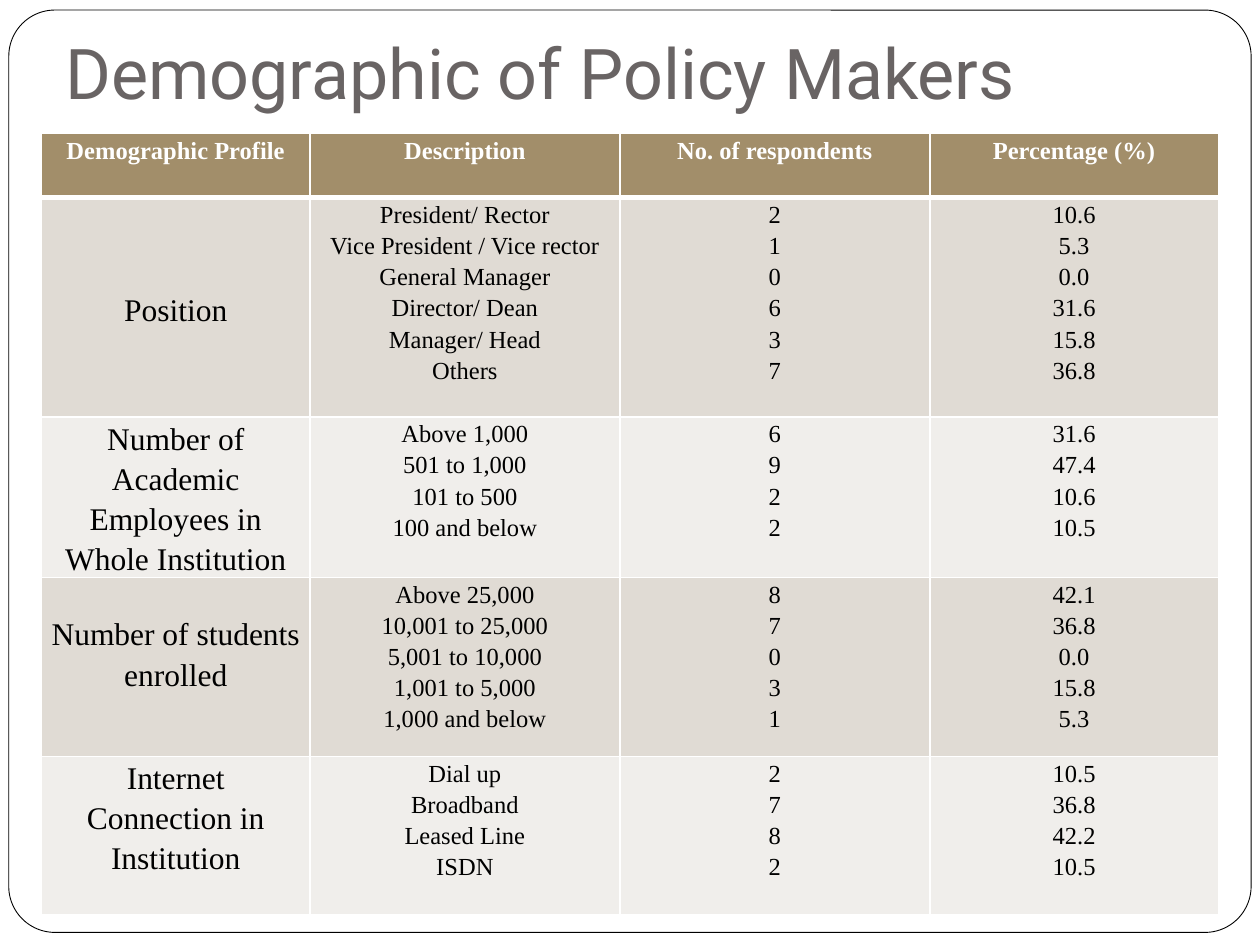
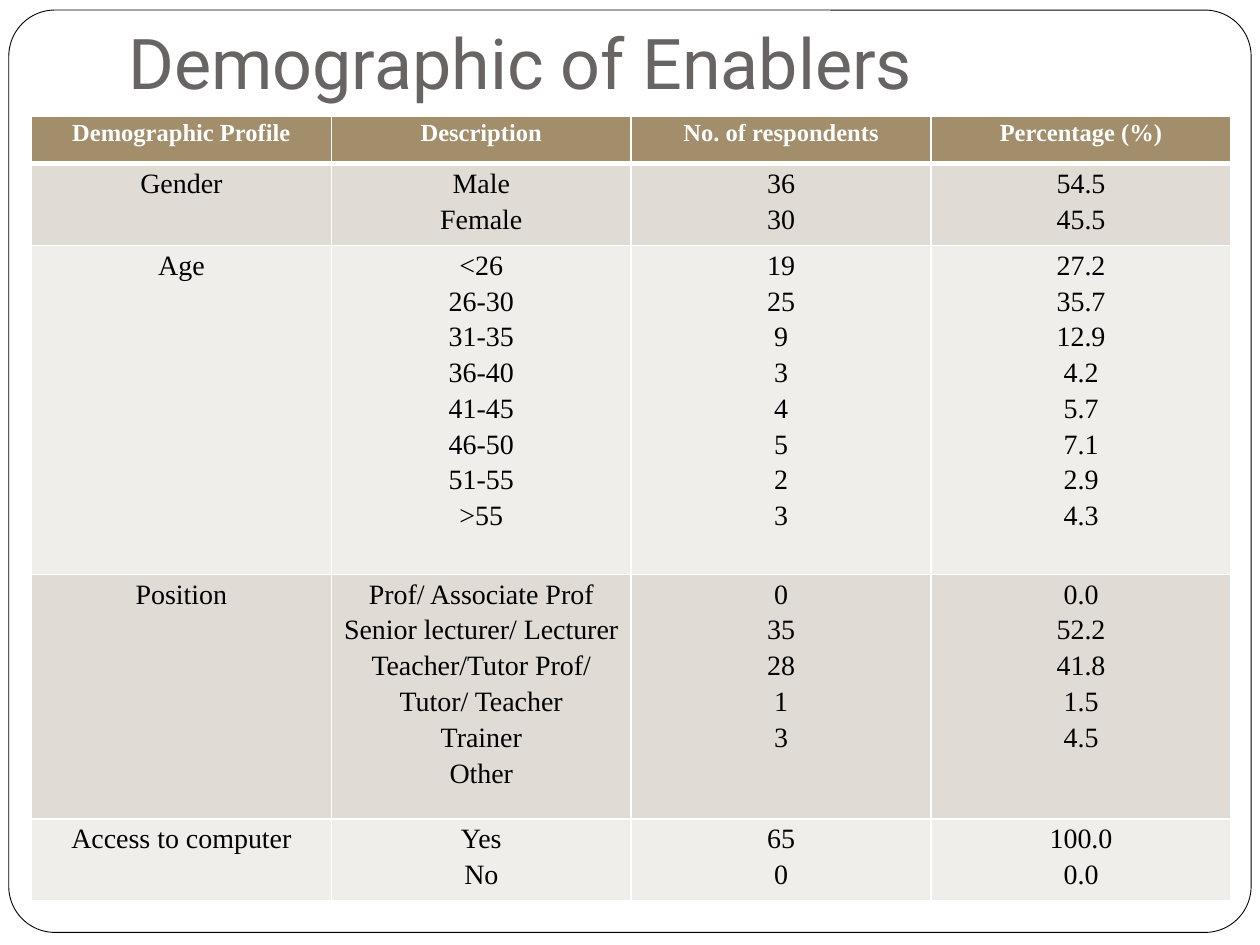
"""Build two slides with demographic tables of policy makers and enablers."""
from lxml.etree import SubElement
from pptx import Presentation
from pptx.dml.color import RGBColor
from pptx.enum.shapes import MSO_SHAPE
from pptx.enum.text import MSO_ANCHOR, MSO_AUTO_SIZE, PP_ALIGN
from pptx.oxml import parse_xml
from pptx.oxml.ns import nsdecls
from pptx.util import Inches, Pt

WHITE = RGBColor(0xFF, 0xFF, 0xFF)
BLACK = RGBColor(0, 0, 0)
TITLE_GREY = RGBColor(0x69, 0x64, 0x64)
HEADER_TAN = RGBColor(0xA2, 0x8E, 0x6A)
BANDS = [RGBColor(0xF0, 0xEE, 0xEB), RGBColor(0xE0, 0xDB, 0xD4)]
TITLE_FONT = "Roboto"
TABLE_FONT = "Times New Roman"
HEADER_SIZE = 14
HEADINGS = ["Demographic Profile", "Description", "No. of respondents", "Percentage (%)"]

SLIDES = [
    {
        "title": "Demographic of Policy Makers",
        "title_at": (0.42, -0.25),
        "table_at": (0.33, 1.06),
        "columns": [2.13, 2.46, 2.46, 2.29],
        "row_heights": [0.51, 1.74, 1.18, 1.42, 1.26],
        "label_size": 18,
        "value_size": 14,
        "label_drops": {1: 0.72, 3: 0.28},
        "groups": [
            ("Position", [
                ("President/ Rector", "2", "10.6"),
                ("Vice President / Vice rector", "1", "5.3"),
                ("General Manager", "0", "0.0"),
                ("Director/ Dean", "6", "31.6"),
                ("Manager/ Head", "3", "15.8"),
                ("Others", "7", "36.8"),
            ]),
            ("Number of Academic Employees in Whole Institution", [
                ("Above 1,000", "6", "31.6"),
                ("501 to 1,000", "9", "47.4"),
                ("101 to 500", "2", "10.6"),
                ("100 and below", "2", "10.5"),
            ]),
            ("Number of students enrolled", [
                ("Above 25,000", "8", "42.1"),
                ("10,001 to 25,000", "7", "36.8"),
                ("5,001 to 10,000", "0", "0.0"),
                ("1,001 to 5,000", "3", "15.8"),
                ("1,000 and below", "1", "5.3"),
            ]),
            ("Internet Connection in Institution", [
                ("Dial up", "2", "10.5"),
                ("Broadband", "7", "36.8"),
                ("Leased Line", "8", "42.2"),
                ("ISDN", "2", "10.5"),
            ]),
        ],
    },
    {
        "title": "Demographic of Enablers",
        "title_at": (0.92, -0.33),
        "table_at": (0.25, 0.92),
        "columns": [2.38] * 4,
        "row_heights": [0.38, 0.65, 2.61, 1.94, 0.65],
        "label_size": 16,
        "value_size": 16,
        "label_drops": {},
        "groups": [
            ("Gender", [("Male", "36", "54.5"), ("Female", "30", "45.5")]),
            ("Age", [
                ("<26", "19", "27.2"),
                ("26-30", "25", "35.7"),
                ("31-35", "9", "12.9"),
                ("36-40", "3", "4.2"),
                ("41-45", "4", "5.7"),
                ("46-50", "5", "7.1"),
                ("51-55", "2", "2.9"),
                (">55", "3", "4.3"),
            ]),
            ("Position", [
                ("Prof/ Associate Prof", "0", "0.0"),
                ("Senior lecturer/ Lecturer", "35", "52.2"),
                ("Teacher/Tutor Prof/ Tutor/ Teacher", "28", "41.8"),
                ("Trainer", "1", "1.5"),
                ("Other", "3", "4.5"),
            ]),
            ("Access to computer", [("Yes", "65", "100.0"), ("No", "0", "0.0")]),
        ],
    },
]


def set_borders(cell, top, bottom):
    """Give the cell white borders, with top and bottom widths in points."""
    properties = cell._tc.get_or_add_tcPr()
    widths = {"lnL": 1, "lnR": 1, "lnT": top, "lnB": bottom}
    for position, (side, width) in enumerate(widths.items()):
        border = parse_xml(f'<a:{side} {nsdecls("a")} w="{Pt(width)}"/>')
        fill = SubElement(border, border.tag.replace(side, "solidFill"))
        SubElement(fill, border.tag.replace(side, "srgbClr"), val=str(WHITE))
        properties.insert(position, border)


def fill_cell(cell, text, size, color, bold, band, drop):
    """Write centred lines into the cell on its band colour."""
    cell.fill.solid()
    cell.fill.fore_color.rgb = band
    cell.margin_left = cell.margin_right = Inches(0.07)
    cell.margin_top = Inches(drop)
    cell.margin_bottom = 0
    cell.text_frame.text = text
    for paragraph in cell.text_frame.paragraphs:
        paragraph.alignment = PP_ALIGN.CENTER
        paragraph.line_spacing = 1.15
        for run in paragraph.runs:
            run.font.name = TABLE_FONT
            run.font.size = Pt(size)
            run.font.bold = bold
            run.font.color.rgb = color


prs = Presentation()
prs.slide_width = Inches(10)
prs.slide_height = Inches(7.5)

for content in SLIDES:
    slide = prs.slides.add_slide(prs.slide_layouts[5])

    frame = slide.shapes.add_shape(
        MSO_SHAPE.ROUNDED_RECTANGLE, Inches(0.07), Inches(0.08), Inches(9.86), Inches(7.32))
    frame.adjustments[0] = 0.05
    frame.shadow.inherit = False
    frame.fill.solid()
    frame.fill.fore_color.rgb = WHITE
    frame.line.color.rgb = BLACK
    frame.line.width = Pt(0.5)
    slide.shapes._spTree.insert(2, frame._element)

    title = slide.shapes.title
    title.left, title.top = (Inches(value) for value in content["title_at"])
    title.width, title.height = Inches(8.5), Inches(1.25)
    heading = title.text_frame
    heading.text = content["title"]
    heading.word_wrap = True
    heading.auto_size = MSO_AUTO_SIZE.NONE
    heading.vertical_anchor = MSO_ANCHOR.BOTTOM
    heading.margin_left = heading.margin_right = heading.margin_bottom = Inches(0.1)
    heading.margin_top = Inches(0.05)
    heading.paragraphs[0].alignment = PP_ALIGN.LEFT
    title_font = heading.paragraphs[0].runs[0].font
    title_font.name = TITLE_FONT
    title_font.size = Pt(40)
    title_font.color.rgb = TITLE_GREY

    left, top = content["table_at"]
    columns, row_heights = content["columns"], content["row_heights"]
    demographics = slide.shapes.add_table(
        len(row_heights), len(columns), Inches(left), Inches(top),
        Inches(sum(columns)), Inches(sum(row_heights))).table
    for column, width in zip(demographics.columns, columns):
        column.width = Inches(width)
    for row, height in zip(demographics.rows, row_heights):
        row.height = Inches(height)

    for index, text in enumerate(HEADINGS):
        cell = demographics.cell(0, index)
        fill_cell(cell, text, HEADER_SIZE, WHITE, True, HEADER_TAN, 0)
        set_borders(cell, 1, 3)

    for row_index, (label, answers) in enumerate(content["groups"], start=1):
        texts = [label] + ["\n".join(values) for values in zip(*answers)]
        for index, text in enumerate(texts):
            cell = demographics.cell(row_index, index)
            size = content["value_size"] if index else content["label_size"]
            drop = 0 if index else content["label_drops"].get(row_index, 0)
            fill_cell(cell, text, size, BLACK, False, BANDS[row_index % 2], drop)
            set_borders(cell, 3 if row_index == 1 else 1, 1)

prs.save("out.pptx")
